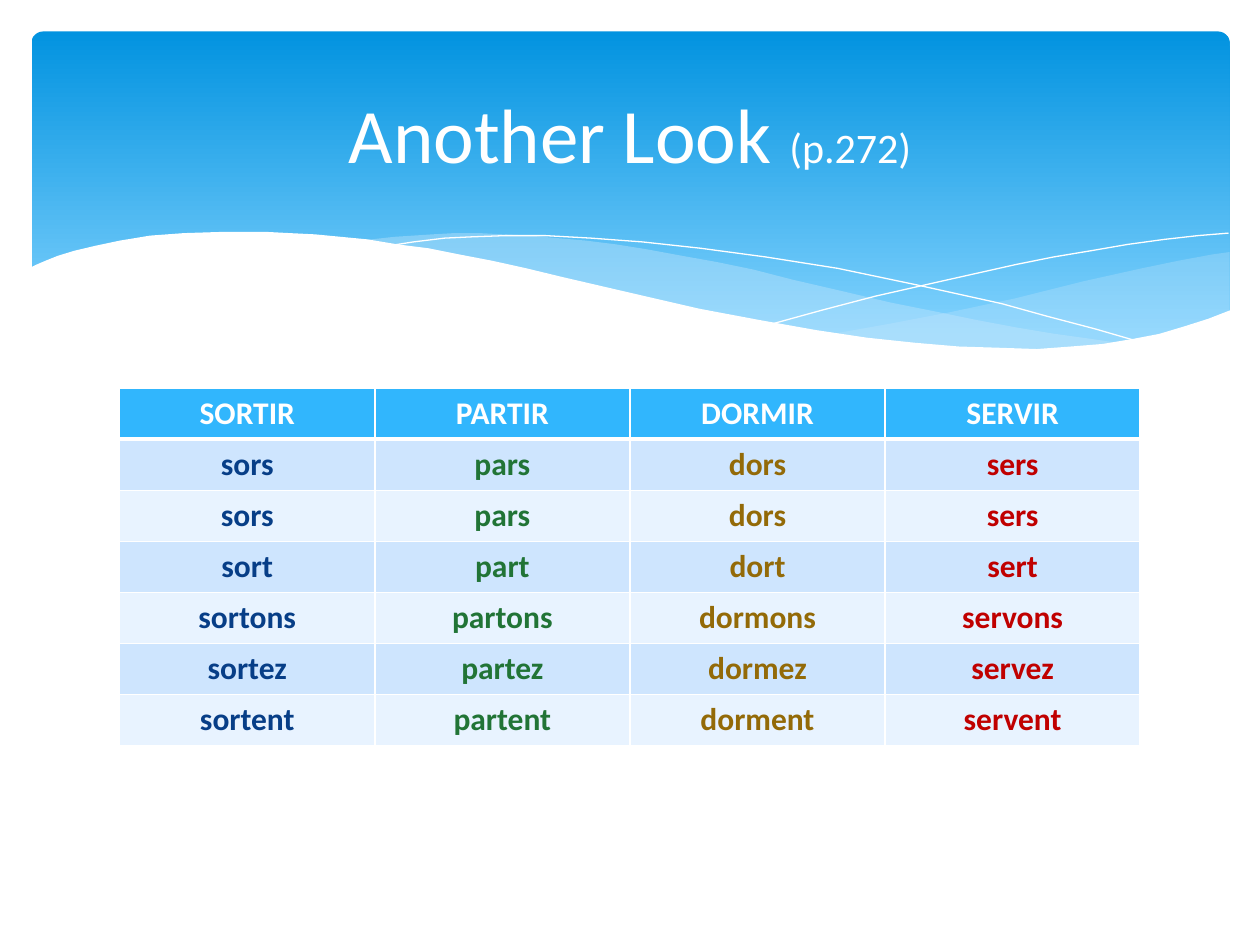
import pptx
import pptx.util
import pptx.dml.color
import pptx.enum.shapes
import pptx.enum.text
import pptx.oxml
import pptx.oxml.ns

RGBColor = pptx.dml.color.RGBColor
WHITE = RGBColor(0xFF, 0xFF, 0xFF)
DEEP_BLUE = RGBColor(0x02, 0x93, 0xE0)
SKY_BLUE = RGBColor(0x83, 0xD3, 0xFE)
MIST = RGBColor(0xC6, 0xE7, 0xFC)
HEADER_BLUE = RGBColor(0x31, 0xB6, 0xFD)
BANDS = [RGBColor(0xE8, 0xF3, 0xFF), RGBColor(0xCE, 0xE5, 0xFE)]
VERB_COLORS = [
    RGBColor(0x07, 0x3E, 0x87),
    RGBColor(0x21, 0x74, 0x36),
    RGBColor(0x93, 0x6A, 0x08),
    RGBColor(0xC0, 0x00, 0x00),
]
FONT = "Calibri"

deck = pptx.Presentation()
deck.slide_width = pptx.util.Inches(10)
deck.slide_height = pptx.util.Inches(7.5)
page = deck.slides.add_slide(deck.slide_layouts[6])
UNIT = deck.slide_width // 1000


def add_curve(points, color, opacity=None, closed=True):
    builder = page.shapes.build_freeform(*points[0], scale=UNIT)
    builder.add_line_segments(points[1:], close=closed)
    curve = builder.convert_to_shape()
    curve.shadow.inherit = False
    if not closed:
        curve.fill.background()
        curve.line.color.rgb = color
        curve.line.width = 0
        return
    curve.fill.solid()
    curve.fill.fore_color.rgb = color
    curve.line.fill.background()
    if opacity:
        tint = curve.fill._xPr.find(".//" + pptx.oxml.ns.qn("a:srgbClr"))
        tint.append(pptx.oxml.parse_xml(
            f'<a:alpha {pptx.oxml.ns.nsdecls("a")} val="{opacity * 1000}"/>'))


def add_border(cell, side, points):
    cell._tc.get_or_add_tcPr().append(pptx.oxml.parse_xml(
        f'<a:ln{side} {pptx.oxml.ns.nsdecls("a")} w="{pptx.util.Pt(points)}">'
        f'<a:solidFill><a:srgbClr val="{WHITE}"/></a:solidFill></a:ln{side}>'))


banner = page.shapes.add_shape(
    pptx.enum.shapes.MSO_SHAPE.ROUNDED_RECTANGLE,
    25 * UNIT, 25 * UNIT, 951 * UNIT, 270 * UNIT)
banner.adjustments[0] = 0.034
banner.shadow.inherit = False
banner.line.fill.background()
banner.fill.gradient()
banner.fill.gradient_angle = 270
for stop, color, position in zip(banner.fill.gradient_stops, [DEEP_BLUE, SKY_BLUE], [0, 0.9]):
    stop.color.rgb = color
    stop.position = position

right_swell = [
    (976, 200), (962, 202), (935, 207), (906, 213), (861, 223), (805, 237),
    (753, 248), (706, 257), (661, 265), (691, 269), (719, 272), (745, 275),
    (769, 277), (803, 278), (835, 277), (863, 275), (889, 272), (913, 267),
    (935, 262), (949, 257), (963, 252), (976, 247),
]
middle_swell = [
    (893, 273), (866, 269), (837, 265), (807, 260), (775, 254), (741, 247),
    (706, 240), (668, 231), (629, 222), (598, 214), (569, 208), (541, 203),
    (514, 198), (489, 194), (465, 191), (442, 189), (420, 187), (399, 186),
    (380, 185), (361, 185), (344, 186), (313, 188), (286, 191), (323, 196),
    (362, 203), (404, 211), (449, 222), (491, 232), (530, 240), (566, 248),
    (601, 255), (634, 261), (665, 266), (695, 270), (722, 274), (748, 276),
    (773, 277), (796, 278), (828, 278), (857, 277), (876, 275),
]
falling_line = [
    (309, 195), (328, 192), (353, 189), (374, 188), (401, 187), (433, 187),
    (469, 189), (510, 192), (556, 197), (608, 204), (665, 213), (727, 226),
    (795, 241), (831, 251), (869, 261), (907, 272),
]
rising_line = [
    (613, 257), (653, 246), (695, 235), (748, 223), (806, 210), (836, 204),
    (866, 199), (895, 194), (924, 190), (951, 187), (975, 185),
]
white_wave = [
    (977, 246), (959, 253), (940, 259), (920, 265), (899, 269), (875, 273),
    (850, 275), (823, 277), (793, 276), (761, 275), (726, 272), (688, 268),
    (648, 262), (603, 254), (555, 245), (503, 233), (447, 220), (418, 213),
    (391, 207), (365, 202), (340, 197), (316, 194), (292, 190), (271, 188),
    (250, 186), (230, 185), (211, 184), (177, 184), (146, 185), (119, 187),
    (95, 191), (76, 195), (59, 199), (46, 203), (36, 207), (29, 210),
    (23, 213), (23, 329), (977, 329),
]
add_curve(right_swell, MIST, opacity=29)
add_curve(middle_swell, MIST, opacity=40)
add_curve(falling_line, WHITE, closed=False)
add_curve(rising_line, WHITE, closed=False)
add_curve(white_wave, WHITE)

conjugations = [
    ["SORTIR", "PARTIR", "DORMIR", "SERVIR"],
    ["sors", "pars", "dors", "sers"],
    ["sors", "pars", "dors", "sers"],
    ["sort", "part", "dort", "sert"],
    ["sortons", "partons", "dormons", "servons"],
    ["sortez", "partez", "dormez", "servez"],
    ["sortent", "partent", "dorment", "servent"],
]
table = page.shapes.add_table(
    len(conjugations), len(VERB_COLORS),
    95 * UNIT, 308 * UNIT, 810 * UNIT, 284 * UNIT).table
for row, forms in enumerate(conjugations):
    for column, form in enumerate(forms):
        cell = table.cell(row, column)
        for side in "LRTB":
            heavy = (row, side) in [(0, "B"), (1, "T")]
            add_border(cell, side, 3 if heavy else 1)
        cell.fill.solid()
        cell.fill.fore_color.rgb = BANDS[row % 2] if row else HEADER_BLUE
        cell.text = form
        para = cell.text_frame.paragraphs[0]
        para.alignment = pptx.enum.text.PP_ALIGN.CENTER
        para.font.name = FONT
        para.font.size = pptx.util.Pt(18)
        para.font.bold = True
        para.font.color.rgb = VERB_COLORS[column] if row else WHITE

box = page.shapes.add_textbox(50 * UNIT, 37 * UNIT, 900 * UNIT, 137 * UNIT)
box.text_frame.word_wrap = True
box.text_frame.vertical_anchor = pptx.enum.text.MSO_ANCHOR.MIDDLE
para = box.text_frame.paragraphs[0]
para.alignment = pptx.enum.text.PP_ALIGN.CENTER
para.font.name = FONT
para.font.color.rgb = WHITE
for words, size in [("Another Look ", 44), ("(p.272)", 24)]:
    span = para.add_run()
    span.text = words
    span.font.size = pptx.util.Pt(size)

deck.save("out.pptx")
